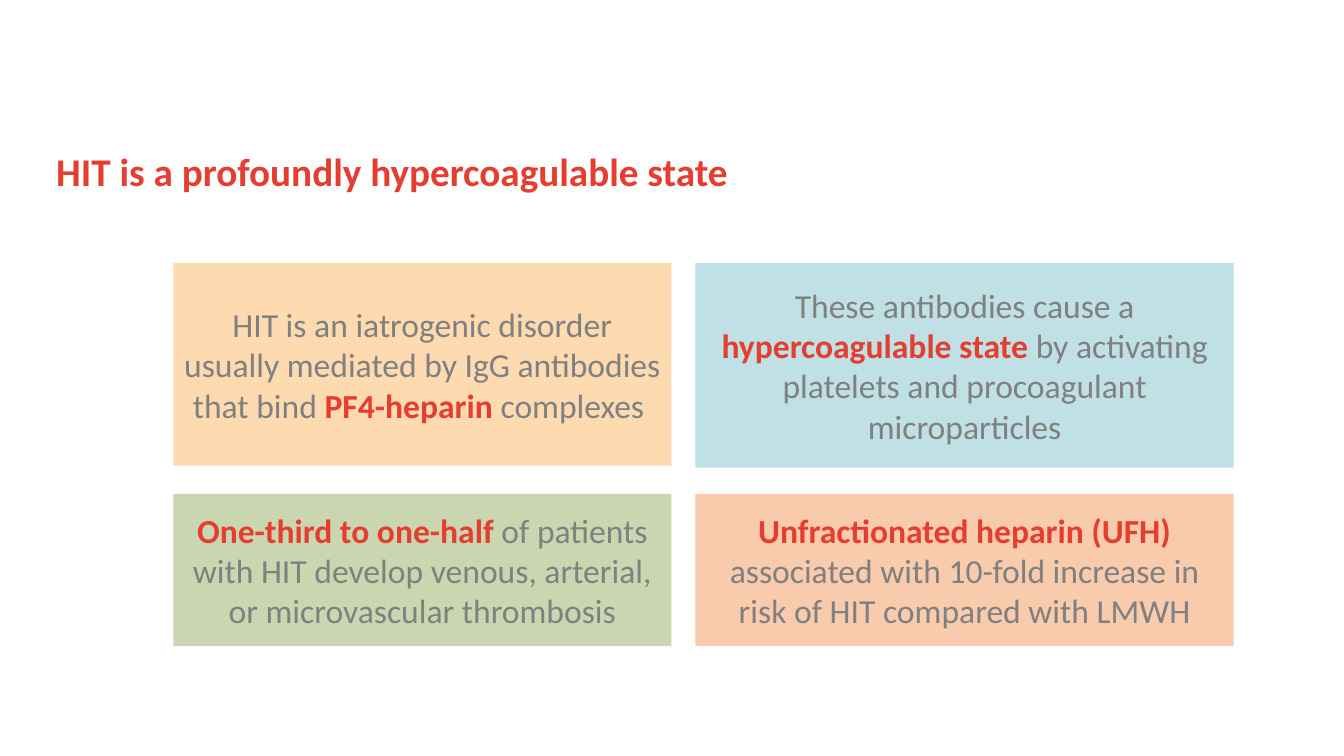
import dataclasses

import pptx
import pptx.dml.color
import pptx.enum.shapes
import pptx.enum.text
import pptx.slide
import pptx.text.text
import pptx.util

Pt = pptx.util.Pt

COLORS = {
    "emphasis": "E53E31",
    "body": "808080",
    "mechanism": "FDDAB0",
    "effect": "BFE0E5",
    "outcome": "CAD6B0",
    "risk": "F8CBAD",
}
FONT = "Calibri"
LEFT_COLUMN = (123.84, 355.7)
RIGHT_COLUMN = (496.8, 384.5)
UPPER_TOP = 187.9
LOWER_TOP = 352.8
LOWER_HEIGHT = 108.7


@dataclasses.dataclass(frozen=True)
class Phrase:
    text: str
    emphasized: bool = False


@dataclasses.dataclass(frozen=True)
class Fact:
    column: tuple[float, float]
    top: float
    height: float
    fill: str
    phrases: tuple[Phrase, ...]


FACTS = (
    Fact(LEFT_COLUMN, UPPER_TOP, 144.7, "mechanism", (
        Phrase("HIT is an iatrogenic disorder usually mediated by IgG antibodies that bind "),
        Phrase("PF4-heparin ", True),
        Phrase("complexes "),
    )),
    Fact(RIGHT_COLUMN, UPPER_TOP, 146.2, "effect", (
        Phrase("These antibodies cause a "),
        Phrase("hypercoagulable state ", True),
        Phrase("by activating platelets and procoagulant microparticles"),
    )),
    Fact(LEFT_COLUMN, LOWER_TOP, LOWER_HEIGHT, "outcome", (
        Phrase("One-third to one-half ", True),
        Phrase("of patients with HIT develop venous, arterial, or microvascular thrombosis"),
    )),
    Fact(RIGHT_COLUMN, LOWER_TOP, LOWER_HEIGHT, "risk", (
        Phrase("Unfractionated heparin (UFH) ", True),
        Phrase("associated with 10-fold increase in risk of HIT compared with LMWH"),
    )),
)


def rgb(name: str) -> pptx.dml.color.RGBColor:
    return pptx.dml.color.RGBColor.from_string(COLORS[name])


def set_font(font: pptx.text.text.Font, size: float) -> None:
    font.name = FONT
    font.size = Pt(size)


def add_headline(slide: pptx.slide.Slide, text: str) -> None:
    headline = slide.shapes.add_textbox(Pt(33.1), Pt(105.8), Pt(864), Pt(56.2))
    headline.text_frame.word_wrap = True
    paragraph = headline.text_frame.paragraphs[0]
    paragraph.text = text
    paragraph.line_spacing = 0.9
    set_font(paragraph.font, 28)
    paragraph.font.bold = True
    paragraph.font.color.rgb = rgb("emphasis")


def add_fact(slide: pptx.slide.Slide, fact: Fact) -> None:
    left, width = fact.column
    panel = slide.shapes.add_shape(
        pptx.enum.shapes.MSO_SHAPE.RECTANGLE,
        Pt(left), Pt(fact.top), Pt(width), Pt(fact.height),
    )
    panel.shadow.inherit = False
    panel.fill.solid()
    panel.fill.fore_color.rgb = rgb(fact.fill)
    panel.line.fill.background()
    panel.text_frame.word_wrap = True
    panel.text_frame.vertical_anchor = pptx.enum.text.MSO_ANCHOR.MIDDLE
    paragraph = panel.text_frame.paragraphs[0]
    paragraph.alignment = pptx.enum.text.PP_ALIGN.CENTER
    set_font(paragraph.font, 24)
    for phrase in fact.phrases:
        run = paragraph.add_run()
        run.text = phrase.text
        run.font.bold = phrase.emphasized
        run.font.color.rgb = rgb("emphasis" if phrase.emphasized else "body")


def main() -> None:
    presentation = pptx.Presentation()
    presentation.slide_width = Pt(960)
    presentation.slide_height = Pt(540)
    slide = presentation.slides.add_slide(presentation.slide_layouts[6])
    add_headline(slide, "HIT is a profoundly hypercoagulable state")
    for fact in FACTS:
        add_fact(slide, fact)
    presentation.save("out.pptx")


if __name__ == "__main__":
    main()
